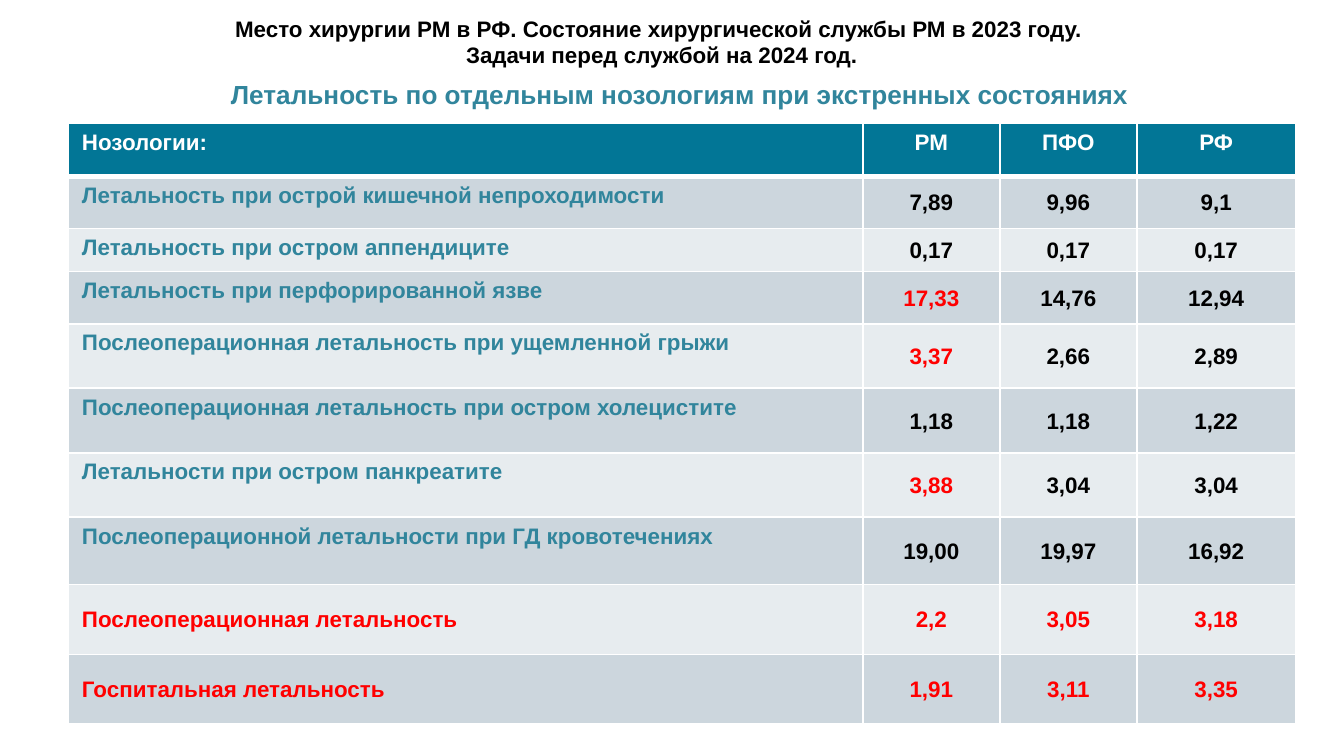
from dataclasses import dataclass

from lxml import etree
from pptx import Presentation
from pptx.dml.color import RGBColor
from pptx.enum.text import MSO_ANCHOR, MSO_AUTO_SIZE, PP_ALIGN
from pptx.oxml.ns import qn
from pptx.util import Inches, Pt

LEFT, CENTER, JUSTIFY = PP_ALIGN.LEFT, PP_ALIGN.CENTER, PP_ALIGN.JUSTIFY
TOP, MIDDLE = MSO_ANCHOR.TOP, MSO_ANCHOR.MIDDLE
NO_AUTOFIT = MSO_AUTO_SIZE.NONE
BLACK = RGBColor(0x00, 0x00, 0x00)
WHITE = RGBColor(0xFF, 0xFF, 0xFF)
RED = RGBColor(0xFF, 0x00, 0x00)
TEAL = RGBColor(0x31, 0x85, 0x9C)
HEADER_FILL = RGBColor(0x02, 0x76, 0x96)
BANDS = (RGBColor(0xCC, 0xD6, 0xDD), RGBColor(0xE7, 0xEC, 0xEF))

SLIDE_WIDTH = 10
SLIDE_HEIGHT = SLIDE_WIDTH * 9 / 16
HEADINGS = ("Нозологии:", "РМ", "ПФО", "РФ")
COLUMN_WIDTHS = (5.91, 1.02, 1.02, 1.18)
HEADER_HEIGHT = 0.39


@dataclass
class Rate:
    label: str
    values: tuple[str, str, str]
    height: float = 0.48
    alarming: bool = False  # the regional value is red
    total: bool = False  # the whole row is red


RATES = [
    Rate("Летальность при острой кишечной непроходимости", ("7,89", "9,96", "9,1"), 0.39),
    Rate("Летальность при остром аппендиците", ("0,17", "0,17", "0,17"), 0.32),
    Rate("Летальность при перфорированной язве", ("17,33", "14,76", "12,94"), 0.39, alarming=True),
    Rate("Послеоперационная летальность при ущемленной грыжи", ("3,37", "2,66", "2,89"), alarming=True),
    Rate("Послеоперационная летальность при остром холецистите", ("1,18", "1,18", "1,22")),
    Rate("Летальности при остром панкреатите", ("3,88", "3,04", "3,04"), alarming=True),
    Rate("Послеоперационной летальности при ГД кровотечениях", ("19,00", "19,97", "16,92"), 0.5),
    Rate("Послеоперационная летальность", ("2,2", "3,05", "3,18"), 0.52, total=True),
    Rate("Госпитальная летальность", ("1,91", "3,11", "3,35"), 0.52, total=True),
]


def write(tf, *lines: str, size: float = 12, color: RGBColor = BLACK, align=CENTER) -> None:
    for i, line in enumerate(lines):
        p = tf.add_paragraph() if i else tf.paragraphs[0]
        p.alignment = align
        r = p.add_run()
        r.text = line
        r.font.name = "Arial"
        r.font.size = Pt(size)
        r.font.bold = True
        r.font.color.rgb = color


def set_borders(cell, bottom: float = 1, top: float = 1) -> None:
    tc_pr = cell._tc.get_or_add_tcPr()
    widths = {"a:lnL": 1, "a:lnR": 1, "a:lnT": top, "a:lnB": bottom}
    for i, (tag, width) in enumerate(widths.items()):
        ln = etree.Element(qn(tag), w=str(Pt(width)))
        fill = etree.SubElement(ln, qn("a:solidFill"))
        etree.SubElement(fill, qn("a:srgbClr"), val=str(WHITE))
        tc_pr.insert(i, ln)


def fill_cell(cell, text: str, fill: RGBColor, color: RGBColor, align=CENTER,
              anchor=TOP, tight: bool = False) -> None:
    cell.fill.solid()
    cell.fill.fore_color.rgb = fill
    cell.vertical_anchor = anchor
    if tight:
        cell.margin_left = cell.margin_right = cell.margin_top = Inches(0.01)
        cell.margin_bottom = 0
    write(cell.text_frame, text, color=color, align=align)


def add_rates_table(s) -> None:
    heights = [HEADER_HEIGHT] + [rate.height for rate in RATES]
    table = s.shapes.add_table(
        len(heights), len(HEADINGS), Inches(0.51), Inches(0.92),
        Inches(sum(COLUMN_WIDTHS)), Inches(sum(heights))).table
    for column, width in zip(table.columns, COLUMN_WIDTHS):
        column.width = Inches(width)
    for row, height in zip(table.rows, heights):
        row.height = Inches(height)

    for c, heading in enumerate(HEADINGS):
        cell = table.cell(0, c)
        fill_cell(cell, heading, HEADER_FILL, WHITE, CENTER if c else JUSTIFY)
        set_borders(cell, bottom=3)

    for i, rate in enumerate(RATES):
        band = BANDS[i % 2]
        top = 1 if i else 3
        label = table.cell(i + 1, 0)
        if rate.total:
            fill_cell(label, rate.label, band, RED, LEFT, MIDDLE)
        else:
            fill_cell(label, rate.label, band, TEAL, JUSTIFY)
        set_borders(label, top=top)
        for c, value in enumerate(rate.values, 1):
            red = rate.total or (rate.alarming and c == 1)
            cell = table.cell(i + 1, c)
            fill_cell(cell, value, band, RED if red else BLACK, anchor=MIDDLE, tight=True)
            set_borders(cell, top=top)


def main() -> None:
    prs = Presentation()
    prs.slide_width, prs.slide_height = Inches(SLIDE_WIDTH), Inches(SLIDE_HEIGHT)
    s = prs.slides.add_slide(prs.slide_layouts[5])

    tf = s.shapes.add_textbox(Inches(0.67), Inches(0.06), Inches(8.51), Inches(0.51)).text_frame
    tf.word_wrap = True
    write(tf, "Место хирургии РМ в РФ. Состояние хирургической службы РМ в 2023 году. ",
          "Задачи перед службой на 2024 год.")

    add_rates_table(s)

    title = s.shapes.title
    title.left, title.top = Inches(0.91), Inches(0.53)
    title.width, title.height = Inches(8.35), Inches(0.47)
    title.text_frame.auto_size = NO_AUTOFIT
    title.text_frame.vertical_anchor = TOP
    write(title.text_frame, "Летальность по отдельным нозологиям при экстренных состояниях ",
          size=14, color=TEAL)

    prs.save("out.pptx")


if __name__ == "__main__":
    main()
